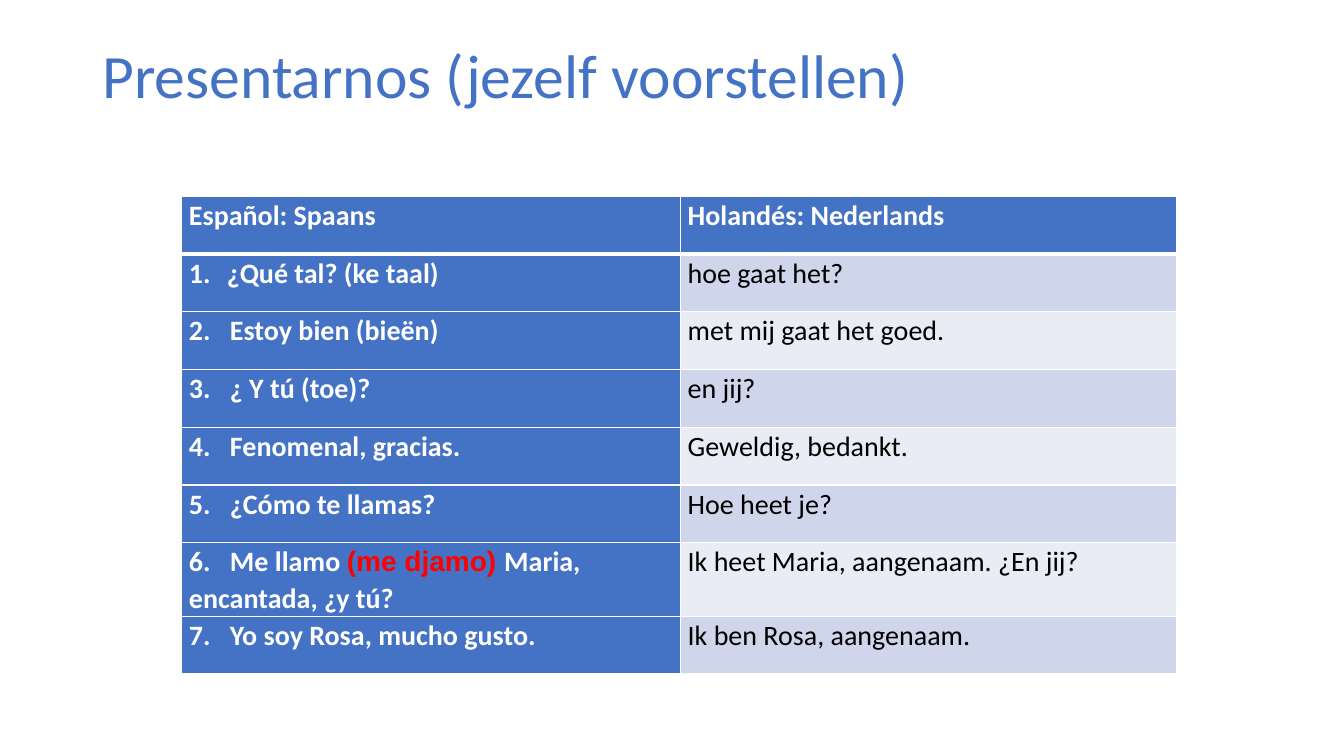
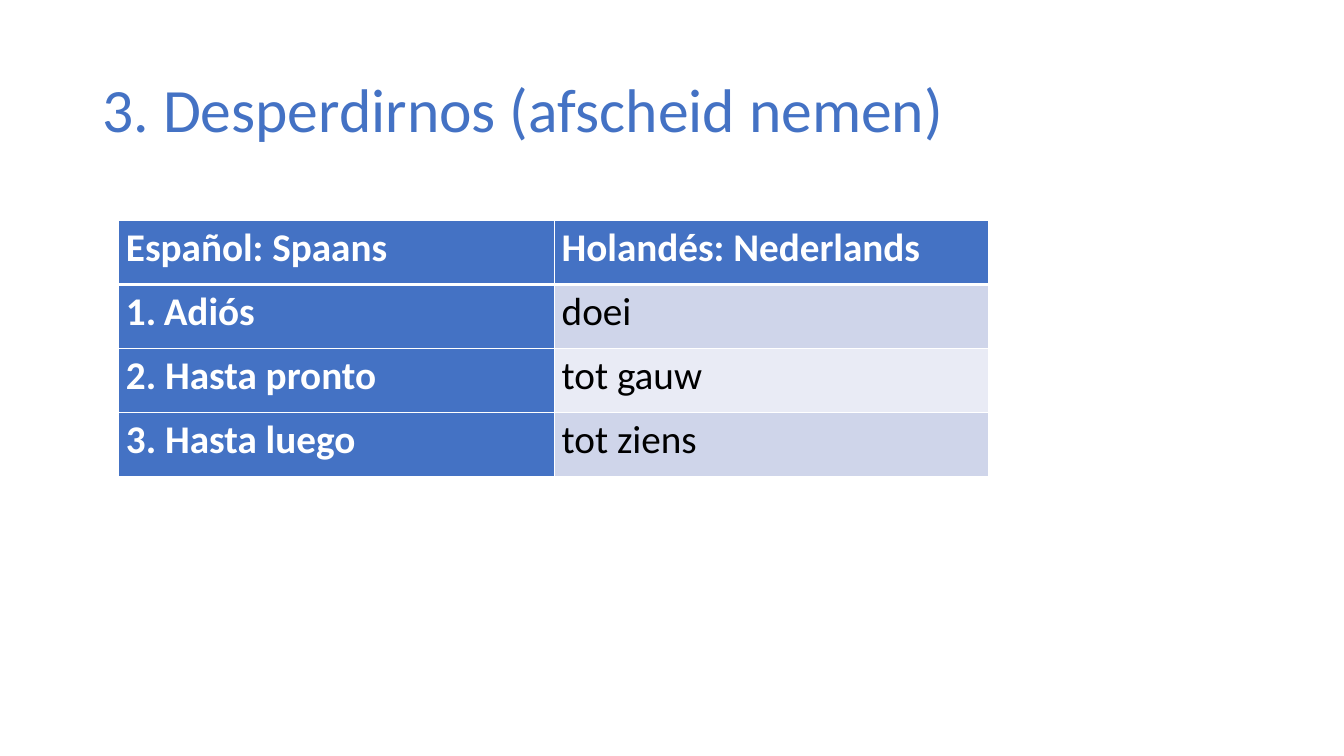
"""Builds two Spanish and Dutch phrase slides, each a title over a table."""
from lxml.etree import SubElement as Sub
from pptx import Presentation as Deck
from pptx.dml.color import RGBColor as Color
from pptx.enum.text import MSO_ANCHOR as Anchor, MSO_AUTO_SIZE as Fit, PP_ALIGN as Align
from pptx.oxml.ns import qn
from pptx.util import Pt

BLUE = Color(0x44, 0x72, 0xC4)
WHITE = Color(0xFF, 0xFF, 0xFF)
BLACK = Color(0, 0, 0)
RED = Color(0xFF, 0, 0)
BANDS = Color(0xE9, 0xEB, 0xF5), Color(0xCF, 0xD5, 0xEA)
FONT = "Calibri"
SCALE = 9525
HEADS = "Español: Spaans", "Holandés: Nederlands"
MEET = [
    ("¿Qué tal? (ke taal)", "hoe gaat het?"),
    ("2.\tEstoy bien (bieën)", "met mij gaat het goed."),
    ("3.\t¿ Y tú (toe)?", "en jij?"),
    ("4.\tFenomenal, gracias.", "Geweldig, bedankt."),
    ("5.\t¿Cómo te llamas?", "Hoe heet je?"),
    (["6.\tMe llamo ", ("(me djamo) ", {"font": "Arial", "color": RED}),
      "Maria, encantada, ¿y tú?"], "Ik heet Maria, aangenaam. ¿En jij?"),
    ("7.\tYo soy Rosa, mucho gusto.", "Ik ben Rosa, aangenaam."),
]
LEAVE = [
    ("Adiós", "doei"),
    ("2. Hasta pronto", "tot gauw"),
    ("3. Hasta luego", "tot ziens"),
]


def px(size):
    return size * SCALE


def write(par, text, size=20, color=BLACK, bold=False, font=FONT):
    run = par.add_run()
    run.text = text
    face = run.font
    face.size, face.bold, face.name = Pt(size), bold, font
    face.color.rgb = color


def title(slide, text, anchor):
    shape = slide.shapes.title
    shape.left, shape.top, shape.width, shape.height = map(px, (88, 38, 1104, 139))
    frame = shape.text_frame
    frame.word_wrap, frame.auto_size = True, Fit.NONE
    frame.vertical_anchor = anchor
    par = frame.paragraphs[0]
    par.alignment, par.line_spacing = Align.LEFT, 0.9
    write(par, text, size=44, color=BLUE)


def border(cell, top, base):
    props = cell._tc.get_or_add_tcPr()
    for spot, (side, width) in enumerate(zip("LRTB", (1, 1, top, base))):
        line = Sub(props, qn(f"a:ln{side}"), w=str(Pt(width)))
        Sub(Sub(line, qn("a:solidFill")), qn("a:srgbClr"), val=str(WHITE))
        props.insert(spot, line)


def number(par):
    props = par._p.get_or_add_pPr()
    props.set("marL", str(px(36)))
    props.set("indent", str(px(-36)))
    Sub(props, qn("a:buFont"), typeface="+mj-lt")
    Sub(props, qn("a:buAutoNum"), type="arabicPeriod")


def tab(par):
    stops = Sub(par._p.get_or_add_pPr(), qn("a:tabLst"))
    Sub(stops, qn("a:tab"), pos=str(px(39)), algn="l")


def fill(cell, text, row, col, size):
    strong = row == 0 or col == 0
    cell.margin_left = cell.margin_right = px(7)
    cell.margin_top = cell.margin_bottom = 0
    cell.fill.solid()
    cell.fill.fore_color.rgb = BLUE if strong else BANDS[row % 2]
    border(cell, 3 if row == 1 else 1, 3 if row == 0 else 1)
    par = cell.text_frame.paragraphs[0]
    par.line_spacing, par.space_after = 1.07, Pt(8)
    parts = [text] if isinstance(text, str) else text
    if col == 0 and row == 1:
        number(par)
    elif "\t" in parts[0]:
        tab(par)
    look = {"size": size, "bold": strong, "color": WHITE if strong else BLACK}
    for part in parts:
        words, extra = (part, {}) if isinstance(part, str) else part
        write(par, words, **{**look, **extra})


def table(slide, pairs, left, top, cols, high, size):
    rows = [HEADS, *pairs]
    box = map(px, (left, top, sum(cols), high * len(rows)))
    grid = slide.shapes.add_table(len(rows), len(cols), *box).table
    for col, width in zip(grid.columns, cols):
        col.width = px(width)
    for y, pair in enumerate(rows):
        grid.rows[y].height = px(high)
        for x, text in enumerate(pair):
            fill(grid.cell(y, x), text, y, x, size)


def main():
    deck = Deck()
    deck.slide_width, deck.slide_height = px(1280), px(720)
    plain = deck.slide_layouts.get_by_name("Title Only")

    slide = deck.slides.add_slide(plain)
    title(slide, "Presentarnos (jezelf voorstellen)", Anchor.TOP)
    table(slide, MEET, 173, 187, (475, 473), 55, 20)

    slide = deck.slides.add_slide(plain)
    title(slide, "3. Desperdirnos (afscheid nemen)", Anchor.MIDDLE)
    table(slide, LEAVE, 113, 210, (415, 414), 61, 28)

    deck.save("out.pptx")


if __name__ == "__main__":
    main()
